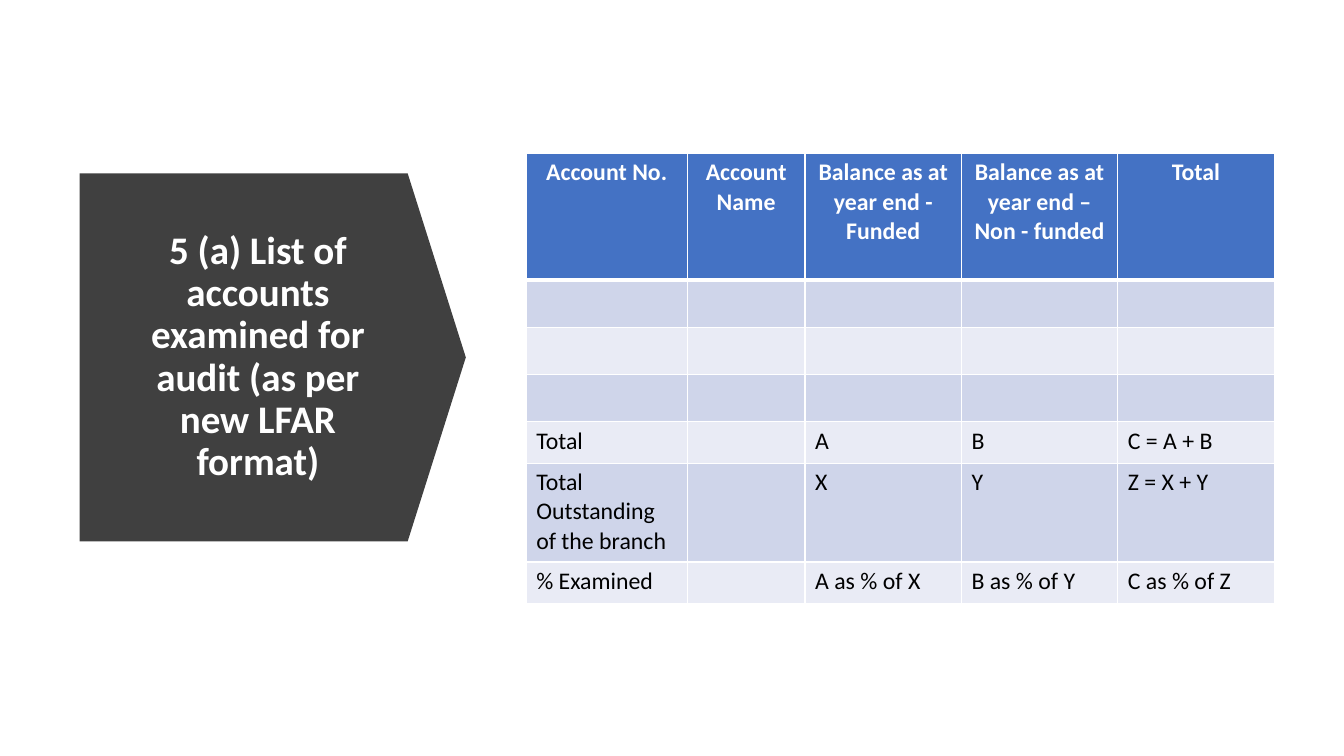
import pptx
import pptx.util
import pptx.dml.color
import pptx.enum.shapes
import pptx.enum.text
import pptx.oxml.ns
from dataclasses import dataclass
from lxml import etree
from pptx.util import Cm

# Content
TITLE = "5 (a) List of accounts examined for audit (as per new LFAR format)"
TABLE_ROWS = [
    ["Account No.", "Account Name", "Balance as at year end - Funded",
     "Balance as at year end – Non - funded", "Total"],
    [""] * 5,
    [""] * 5,
    [""] * 5,
    ["Total", "", "A", "B", "C = A + B"],
    ["Total Outstanding of the branch", "", "X", "Y", "Z = X + Y"],
    ["% Examined", "", "A as % of X", "B as % of Y", "C as % of Z"],
]
COLUMN_WIDTHS = [4.06, 2.97, 3.94, 3.94, 3.94]
ROW_HEIGHTS = [3.2, 1.19, 1.19, 1.19, 1.04, 2.49, 1.04]


@dataclass(frozen=True)
class Theme:
    font: str = "Calibri"
    title_size: float = 27.9
    table_size: float = 17
    arrow: str = "404040"
    header: str = "4472C4"
    bands: tuple = ("E9EBF5", "CFD5EA")
    light: str = "FFFFFF"
    dark: str = "000000"
    border: float = 1
    header_border: float = 3


THEME = Theme()


def color(value):
    return pptx.dml.color.RGBColor.from_string(value)


def add_text(paragraph, text, size, text_color, bold):
    run = paragraph.add_run()
    run.text = text
    run.font.name = THEME.font
    run.font.size = pptx.util.Pt(size)
    run.font.bold = bold
    run.font.color.rgb = color(text_color)


def add_border(cell, side, width):
    qn = pptx.oxml.ns.qn
    line = etree.SubElement(cell._tc.get_or_add_tcPr(), qn("a:ln" + side),
                            w=str(pptx.util.Pt(width)))
    fill = etree.SubElement(line, qn("a:solidFill"))
    etree.SubElement(fill, qn("a:srgbClr"), val=THEME.light)


def add_arrow(slide):
    arrow = slide.shapes.add_shape(pptx.enum.shapes.MSO_SHAPE.DOWN_ARROW,
                                   Cm(2.24), Cm(4.14), Cm(9.27), Cm(9.73))
    arrow.rotation = 270
    arrow.adjustments[0] = 1
    arrow.adjustments[1] = 0.158
    arrow.shadow.inherit = False
    arrow.fill.solid()
    arrow.fill.fore_color.rgb = color(THEME.arrow)
    arrow.line.fill.background()


def add_title(slide):
    box = slide.shapes.add_textbox(Cm(2.84), Cm(5.46), Cm(7.32), Cm(7.09))
    frame = box.text_frame
    frame.word_wrap = True
    frame.vertical_anchor = pptx.enum.text.MSO_ANCHOR.MIDDLE
    paragraph = frame.paragraphs[0]
    paragraph.alignment = pptx.enum.text.PP_ALIGN.CENTER
    paragraph.line_spacing = 0.9
    add_text(paragraph, TITLE, THEME.title_size, THEME.light, True)


def fill_cell(cell, text, row_index):
    is_header = row_index == 0
    for side in "LRTB":
        thick = is_header and side == "B"
        add_border(cell, side, THEME.header_border if thick else THEME.border)
    cell.fill.solid()
    cell.fill.fore_color.rgb = color(THEME.header if is_header else THEME.bands[row_index % 2])
    if text:
        paragraph = cell.text_frame.paragraphs[0]
        if is_header:
            paragraph.alignment = pptx.enum.text.PP_ALIGN.CENTER
        add_text(paragraph, text, THEME.table_size,
                 THEME.light if is_header else THEME.dark, is_header)


def add_accounts_table(slide):
    table = slide.shapes.add_table(
        len(ROW_HEIGHTS), len(COLUMN_WIDTHS), Cm(13.26), Cm(3.86),
        Cm(sum(COLUMN_WIDTHS)), Cm(sum(ROW_HEIGHTS))).table
    for column, width in zip(table.columns, COLUMN_WIDTHS):
        column.width = Cm(width)
    for row, height in zip(table.rows, ROW_HEIGHTS):
        row.height = Cm(height)
    for row_index, texts in enumerate(TABLE_ROWS):
        for column_index, text in enumerate(texts):
            fill_cell(table.cell(row_index, column_index), text, row_index)


def main():
    presentation = pptx.Presentation()
    presentation.slide_width = Cm(33.87)
    presentation.slide_height = Cm(19.05)
    slide = presentation.slides.add_slide(presentation.slide_layouts[6])

    # Title on its arrow
    add_arrow(slide)
    add_title(slide)

    # Accounts examined
    add_accounts_table(slide)

    presentation.save("out.pptx")


if __name__ == "__main__":
    main()
